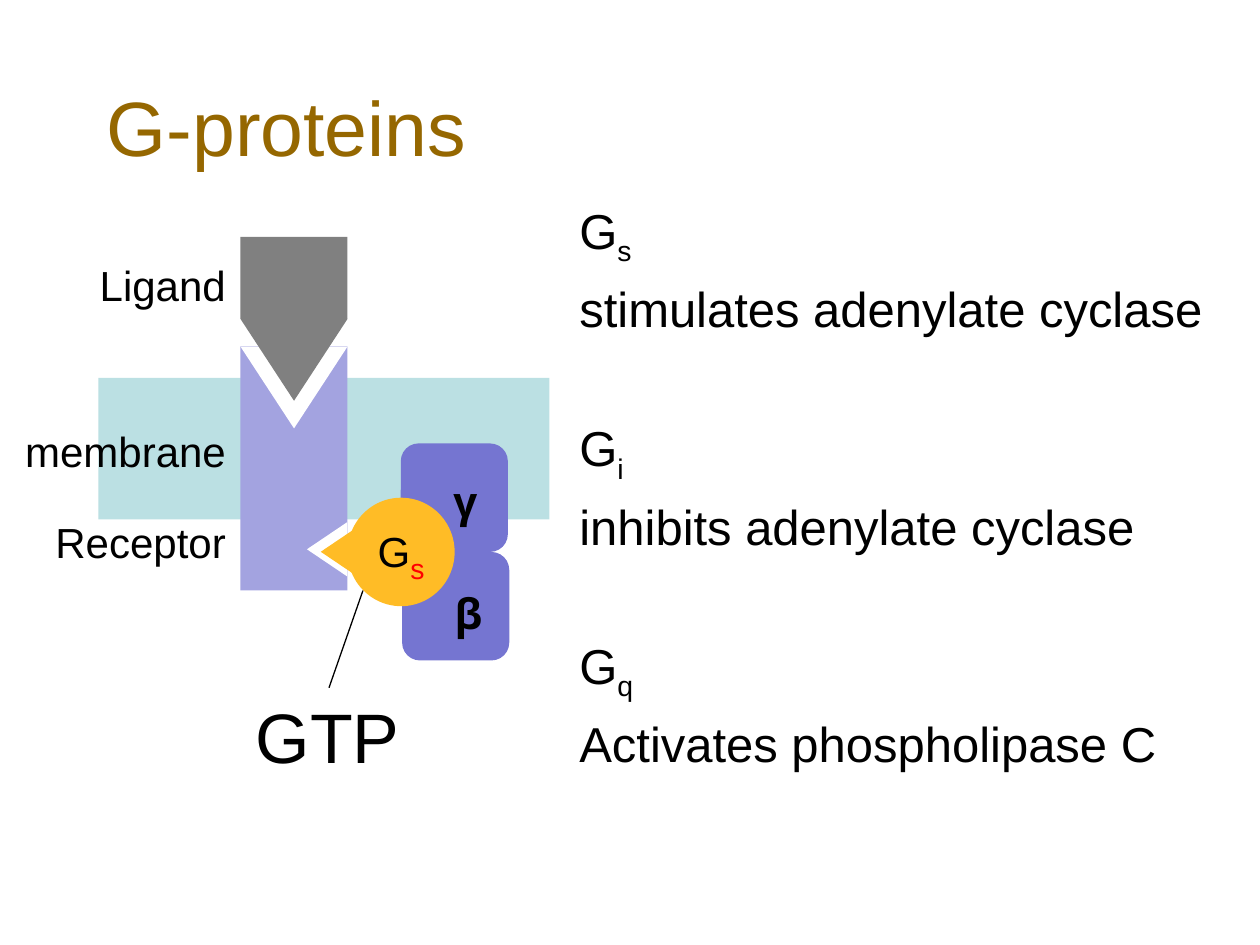
from lxml import etree
from pptx import Presentation
from pptx import util as u
from pptx.dml.color import RGBColor
from pptx.enum import shapes, text
from pptx.oxml import ns

HUES = {
    "title": "956700", "ink": "000000", "sub": "FF0000", "white": "FFFFFF",
    "membrane": "BBE0E3", "receptor": "A3A3E0", "ligand": "808080",
    "beta": "7575D1", "alpha": "FFBC26",
}
KIND = shapes.MSO_SHAPE
SIDE = text.PP_ALIGN
EDGE = text.MSO_ANCHOR


def hue(name):
    return RGBColor.from_string(HUES[name])


def add_run(para, words, size=24, color="ink", face="Arial", bold=False, low=False):
    """Add one run to a paragraph; low makes it a subscript."""
    run = para.add_run()
    run.text = words
    font = run.font
    font.size, font.name, font.bold = u.Pt(size), face, bold
    font.color.rgb = hue(color)
    if low:
        run._r.get_or_add_rPr().set("baseline", "-25000")


class Board:
    def __init__(self, slide, face="Arial"):
        self.slide = slide
        self.face = face

    def shape(self, kind, box, color, turn=0):
        item = self.slide.shapes.add_shape(kind, *map(u.Pt, box))
        item.shadow.inherit = False
        item.fill.solid()
        item.fill.fore_color.rgb = hue(color)
        item.line.fill.background()
        item.rotation = turn
        return item

    def label(self, words, box, align=SIDE.LEFT, anchor=EDGE.TOP, wrap=False, **form):
        frame = self.slide.shapes.add_textbox(*map(u.Pt, box)).text_frame
        frame.word_wrap = wrap
        frame.vertical_anchor = anchor
        para = frame.paragraphs[0]
        para.alignment = align
        if words:
            add_run(para, words, **{"face": self.face, **form})
        return frame

    def line(self, start, end, color="ink", width=0.75):
        item = self.slide.shapes.add_connector(
            shapes.MSO_CONNECTOR.STRAIGHT, *map(u.Pt, start + end))
        item.line.color.rgb = hue(color)
        item.line.width = u.Pt(width)
        etree.SubElement(item._element.spPr, ns.qn("a:effectLst"))


def draw_notes(board):
    """List each G-protein type with its effect."""
    notes = [("s", "stimulates adenylate cyclase"),
             ("i", "inhibits adenylate cyclase"),
             ("q", "Activates phospholipase C")]
    frame = board.label("", (324, 111, 380, 387), wrap=True)
    for n, (kind, effect) in enumerate(notes):
        head = frame.add_paragraph() if n else frame.paragraphs[0]
        if n:
            head.space_before = u.Pt(46)
        add_run(head, "G", size=28)
        add_run(head, kind, size=28, low=True)
        tail = frame.add_paragraph()
        tail.space_before = u.Pt(6.4)
        add_run(tail, effect, size=28)


def draw_cell(board):
    """Draw the receptor in its membrane with ligand and G-protein."""
    left, wide, high = 137.4, 61.2, 46.8
    board.shape(KIND.RECTANGLE, (56.2, 216, 257.8, 80.8), "membrane")
    board.shape(KIND.RECTANGLE, (left, 198, wide, 139.4), "receptor")
    tip = KIND.ISOSCELES_TRIANGLE
    board.shape(tip, (left, 198, wide, high), "white", 180)
    board.shape(tip, (171.4, 302.4, 31, 23), "white", 270)
    board.shape(KIND.RECTANGLE, (left, 135.4, wide, high), "ligand")
    board.shape(tip, (left, 182.2, wide, high), "ligand", 180)
    for x, y in ((229, 253.4), (229.8, 315.4)):
        board.shape(KIND.ROUNDED_RECTANGLE, (x, y, wide, 62), "beta")
    board.shape(tip, (179.3, 303.8, 31, 23), "alpha", 270)
    ball = board.shape(KIND.OVAL, (198.6, 284.4, wide, 62), "alpha")
    ball.text_frame.word_wrap = False
    ball.text_frame.vertical_anchor = EDGE.MIDDLE
    para = ball.text_frame.paragraphs[0]
    para.alignment = SIDE.CENTER
    add_run(para, "G")
    add_run(para, "s", size=28, color="sub", low=True)
    board.line((188, 393), (207.4, 337.5))


def draw_names(board):
    board.label("GTP", (139, 393, 98, 55.4), size=40)
    for words, x, y in (("β", 252.7, 332), ("γ", 252, 268)):
        board.label(words, (x, y, 30, 36), face="Noto Sans", bold=True)
    for words, y in (("Ligand", 144.7), ("Receptor", 291.6), ("membrane", 239.8)):
        board.label(words, (5.8, y, 130.3, 36), align=SIDE.RIGHT)


def main():
    deck = Presentation()
    deck.slide_width, deck.slide_height = u.Pt(720), u.Pt(540)
    board = Board(deck.slides.add_slide(deck.slide_layouts[6]))
    board.label("G-proteins", (54, 30, 612, 72), anchor=EDGE.BOTTOM,
                wrap=True, size=44, color="title")
    draw_notes(board)
    draw_cell(board)
    draw_names(board)
    deck.save("out.pptx")


if __name__ == "__main__":
    main()
